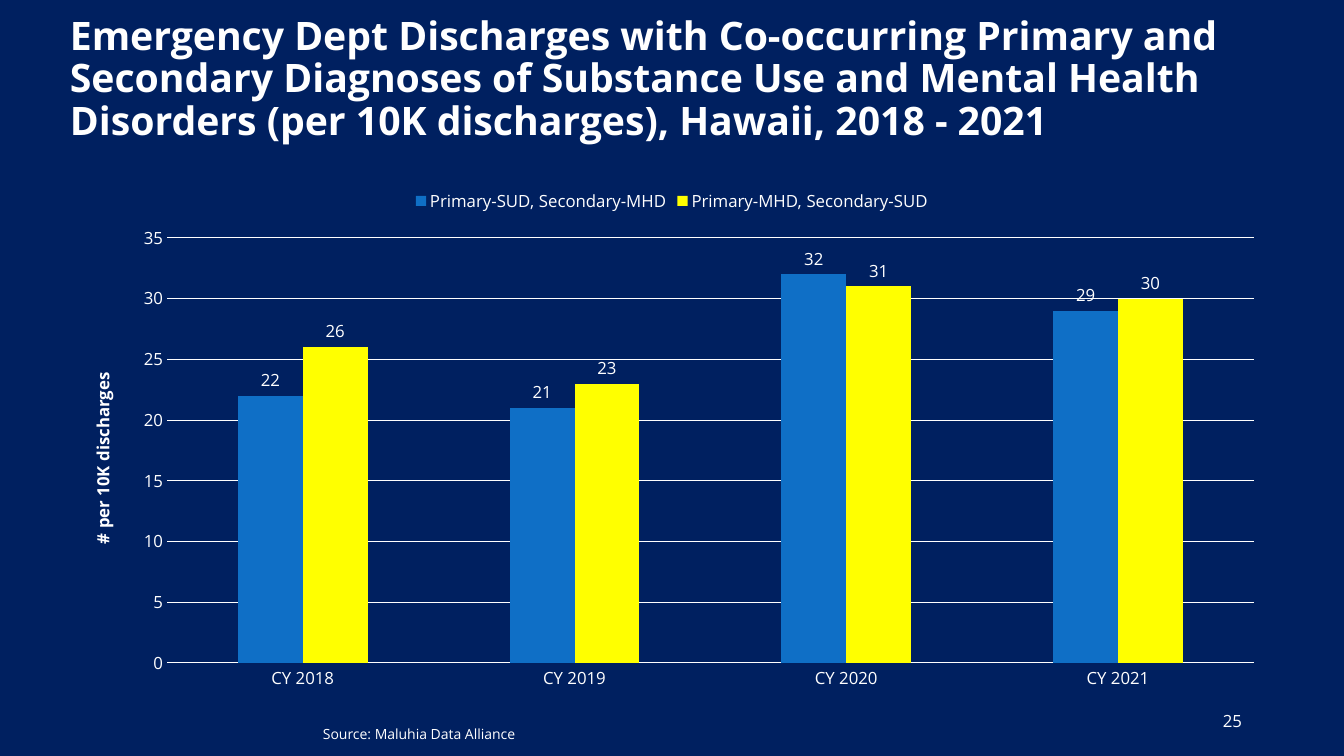
"""Build a slide with a column chart of emergency department discharges."""
from lxml.etree import SubElement
from pptx import Presentation
from pptx.chart.data import CategoryChartData
from pptx.dml.color import RGBColor
from pptx.enum.chart import XL_CHART_TYPE, XL_LABEL_POSITION, XL_LEGEND_POSITION, XL_TICK_MARK
from pptx.enum.text import MSO_ANCHOR, PP_ALIGN
from pptx.oxml.ns import qn
from pptx.util import Emu, Pt

SCALE = 914400 / 100.8
FONT = "Open Sans"
COLORS = {"navy": "002060", "white": "FFFFFF", "blue": "0F6FC6", "yellow": "FFFF00"}


def box(left, top, width, height):
    return [Emu(round(px * SCALE)) for px in (left, top, width, height)]


def style(font, size, bold=False):
    font.name = FONT
    font.size = Pt(size)
    font.bold = bold
    font.color.rgb = RGBColor.from_string(COLORS["white"])


prs = Presentation()
prs.slide_width, prs.slide_height = box(0, 0, 1344, 756)[2:]
s = prs.slides.add_slide(prs.slide_layouts[6])
s.background.fill.solid()
s.background.fill.fore_color.rgb = RGBColor.from_string(COLORS["navy"])

texts = [
    ("Emergency Dept Discharges with Co-occurring Primary and Secondary Diagnoses of "
     "Substance Use and Mental Health Disorders (per 10K discharges), Hawaii, 2018 - 2021",
     (60, 7, 1222, 146), 28, True, MSO_ANCHOR.MIDDLE, PP_ALIGN.LEFT, 0.9),
    ("25", (950, 701, 302, 40), 12, False, MSO_ANCHOR.MIDDLE, PP_ALIGN.RIGHT, 1.0),
    ("Source: Maluhia Data Alliance",
     (313, 721, 460, 27), 10, False, MSO_ANCHOR.TOP, PP_ALIGN.LEFT, 1.0),
]
for text, place, size, bold, anchor, align, spacing in texts:
    tf = s.shapes.add_textbox(*box(*place)).text_frame
    tf.word_wrap = True
    tf.vertical_anchor = anchor
    p = tf.paragraphs[0]
    p.text = text
    p.alignment = align
    p.line_spacing = spacing
    style(p.font, size, bold)

data = CategoryChartData(number_format="0")
data.categories = [f"CY {year}" for year in range(2018, 2022)]
data.add_series("Primary-SUD, Secondary-MHD", (22, 21, 32, 29))
data.add_series("Primary-MHD, Secondary-SUD", (26, 23, 31, 30))
chart_box = (66, 178, 1212, 522)
chart = s.shapes.add_chart(XL_CHART_TYPE.COLUMN_CLUSTERED, *box(*chart_box), data).chart
style(chart.font, 12)
chart.has_title = False
chart.has_legend = True
chart.legend.position = XL_LEGEND_POSITION.TOP
chart.legend.include_in_layout = False
style(chart.legend.font, 12)

plot = chart.plots[0]
plot.gap_width = 219
plot.overlap = 0
plot.vary_by_categories = False
for series, color in zip(plot.series, ("blue", "yellow")):
    series.format.fill.solid()
    series.format.fill.fore_color.rgb = RGBColor.from_string(COLORS[color])
    labels = series.data_labels
    labels.show_value = True
    labels.position = XL_LABEL_POSITION.OUTSIDE_END
    labels.number_format = "0"
    labels.number_format_is_linked = False
    style(labels.font, 12)

cat_axis, val_axis = chart.category_axis, chart.value_axis
for axis in (cat_axis, val_axis):
    axis.major_tick_mark = axis.minor_tick_mark = XL_TICK_MARK.NONE
    style(axis.tick_labels.font, 12)
val_axis.minimum_scale, val_axis.maximum_scale, val_axis.major_unit = 0, 35, 5
val_axis.tick_labels.number_format = "0"
val_axis.tick_labels.number_format_is_linked = False
val_axis.format.line.fill.background()
for line in (cat_axis.format.line, val_axis.major_gridlines.format.line):
    line.color.rgb = RGBColor.from_string(COLORS["white"])
    line.width = Pt(0.75)
p = val_axis.axis_title.text_frame.paragraphs[0]
p.text = "# per 10K discharges"
style(p.font, 12, True)

plot_area = chart.element.find(".//" + qn("c:plotArea"))
for old in plot_area.findall(qn("c:layout")):
    plot_area.remove(old)
layout = SubElement(plot_area, qn("c:layout"))
plot_area.insert(0, layout)
manual = SubElement(layout, qn("c:manualLayout"))
left, top, width, height = chart_box
for tag, value in (
    ("layoutTarget", "inner"), ("xMode", "edge"), ("yMode", "edge"),
    ("x", round((167 - left) / width, 4)), ("y", round((238 - top) / height, 4)),
    ("w", round(1087 / width, 4)), ("h", round(425 / height, 4)),
):
    SubElement(manual, qn("c:" + tag)).set("val", str(value))

prs.save("out.pptx")
